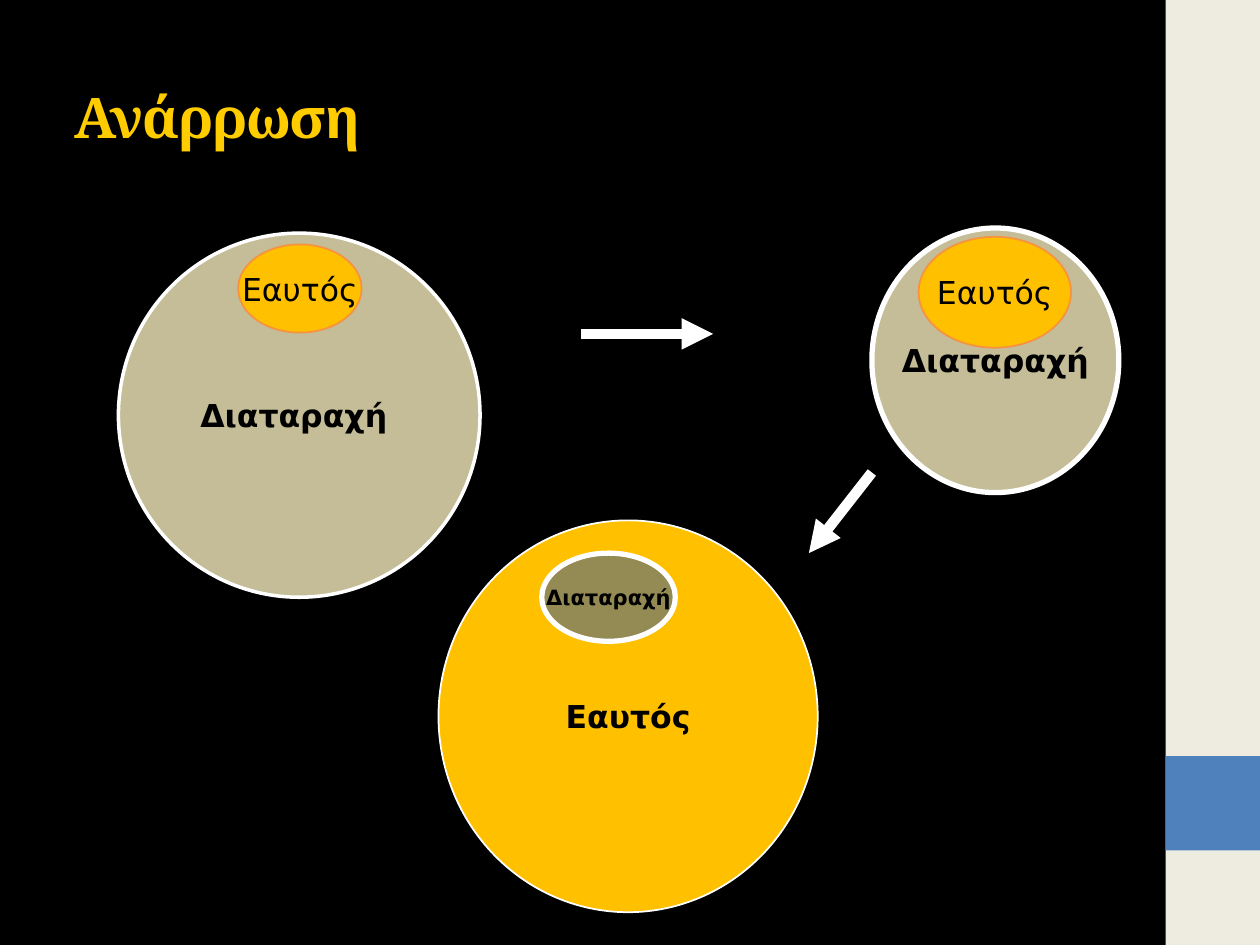
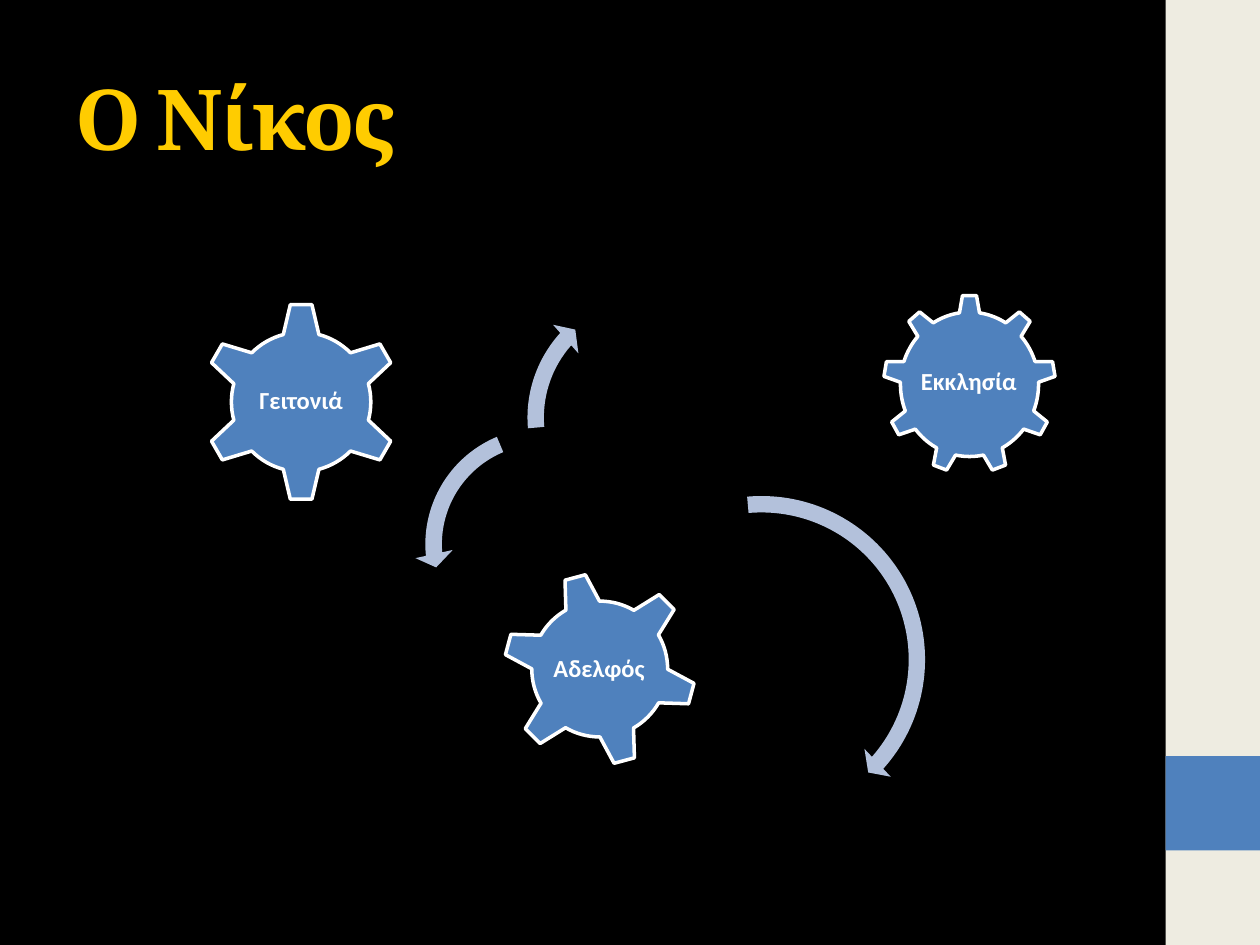
from lxml import etree
from pptx import Presentation
from pptx import util as u
from pptx.dml.color import RGBColor
from pptx.enum import shapes, text
from pptx.oxml.ns import qn

COLORS = {
    "background": "000000", "band": "EEECE1", "accent": "4F81BD",
    "title": "FFCC00", "white": "FFFFFF", "black": "000000",
    "disorder": "C4BD97", "small disorder": "948A54",
    "self": "FFC000", "self edge": "F69240", "turn": "B3C1DB",
}
WIDTH, HEIGHT = u.Inches(10), u.Inches(7.5)
COLUMNS, ROWS = 10, 7.5  # square grid cells across and down the slide
BAND = 0.75  # width of the side band, in cells
Kind = shapes.MSO_SHAPE


def across(columns):
    return round(WIDTH * columns / COLUMNS)


def down(rows):
    return round(HEIGHT * rows / ROWS)


def place(left, top, width, height):
    return across(left), down(top), across(width), down(height)


def color(name):
    return RGBColor.from_string(COLORS[name])


def write(shape, words, size, font, ink="black", bold=True, wrap=True,
          align=text.PP_ALIGN.CENTER, spacing=None, tracking=None, inset=None):
    """Put one formatted line of text, vertically centred, in a shape."""
    frame = shape.text_frame
    frame.word_wrap = wrap
    frame.vertical_anchor = text.MSO_ANCHOR.MIDDLE
    if inset is not None:
        frame.margin_left = frame.margin_right = across(inset)
        frame.margin_top = frame.margin_bottom = down(inset)
    paragraph = frame.paragraphs[0]
    paragraph.alignment = align
    paragraph.line_spacing = spacing
    run = paragraph.add_run()
    run.text = words
    run.font.size, run.font.name, run.font.bold = u.Pt(size), font, bold
    run.font.color.rgb = color(ink)
    if tracking:
        run.font._element.set("spc", str(tracking * 100))


def add_figure(slide, kind, box, fill, edge=None, weight=1, turn=0, adjust=()):
    shape = slide.shapes.add_shape(kind, *place(*box))
    shape.shadow.inherit = False
    shape.rotation = turn
    shape.fill.solid()
    shape.fill.fore_color.rgb = color(fill)
    if edge:
        shape.line.color.rgb = color(edge)
        shape.line.width = u.Pt(weight)
    else:
        shape.line.fill.background()
    for index, value in enumerate(adjust):
        shape.adjustments[index] = value
    return shape


def add_circle(slide, words, box, fill, edge="white", weight=1, size=18, bold=True):
    shape = add_figure(slide, Kind.OVAL, box, fill, edge, weight)
    write(shape, words, size, "DejaVu Sans", bold=bold, wrap=False)


def add_gear(slide, words, kind, box, label_box, turn=0):
    """Draw a gear with a label that stays level when the gear is turned."""
    add_figure(slide, kind, box, "accent", "white", 2, turn)
    label = slide.shapes.add_textbox(*place(*label_box))
    write(label, words, 14, "Calibri", "white", spacing=0.9, inset=0.02)


def add_arrow(slide, start, end):
    connector = slide.shapes.add_connector(
        shapes.MSO_CONNECTOR.STRAIGHT,
        across(start[0]), down(start[1]), across(end[0]), down(end[1]))
    connector.line.color.rgb = color("white")
    connector.line.width = u.Pt(6)
    line = connector.line._get_or_add_ln()
    etree.SubElement(line, qn("a:tailEnd"), type="triangle")
    etree.SubElement(connector._element.spPr, qn("a:effectLst"))


def add_slide(presentation, title, title_box, title_size):
    """Start a slide with the black ground, side band and title."""
    slide = presentation.slides.add_slide(presentation.slide_layouts[6])
    slide.background.fill.solid()
    slide.background.fill.fore_color.rgb = color("background")
    add_figure(slide, Kind.RECTANGLE, (COLUMNS - BAND, 0, BAND, ROWS), "band")
    add_figure(slide, Kind.RECTANGLE,
               (COLUMNS - BAND, ROWS - 2 * BAND, BAND, BAND), "accent")
    heading = slide.shapes.add_textbox(*place(*title_box))
    write(heading, title, title_size, "Cambria", "title",
          align=text.PP_ALIGN.LEFT, tracking=-1)
    return slide


def build_recovery(presentation):
    slide = add_slide(presentation, "Ανάρρωση", (0.49, 0.43, 7.31, 0.98), 32)
    # The disorder shrinks while the self grows
    add_circle(slide, "Διαταραχή ", (0.94, 1.85, 2.87, 2.89), "disorder", weight=2)
    add_circle(slide, "Εαυτός", (1.89, 1.94, 0.98, 0.7), "self", "self edge", bold=False)
    add_circle(slide, "Διαταραχή", (6.92, 1.81, 1.96, 2.1), "disorder", weight=3)
    add_circle(slide, "Εαυτός", (7.29, 1.88, 1.21, 0.88), "self", "self edge", bold=False)
    add_circle(slide, "Εαυτός", (3.48, 4.13, 3.01, 3.11), "self")
    add_circle(slide, "Διαταραχή", (4.3, 4.39, 1.06, 0.7), "small disorder",
               weight=3, size=12)
    # Steps between the stages
    add_arrow(slide, (4.61, 2.65), (5.66, 2.65))
    add_arrow(slide, (6.92, 3.75), (6.42, 4.39))


def build_nikos(presentation):
    slide = add_slide(presentation, "Ο Νίκος", (0.5, 0.3, 8.33, 1.25), 48)
    # People and places around him
    add_gear(slide, "Εκκλησία", Kind.GEAR_9,
             (7.01, 2.34, 1.37, 1.42), (7.28, 2.67, 0.82, 0.74))
    add_gear(slide, "Γειτονιά", Kind.GEAR_6,
             (1.6, 2.4, 1.58, 1.58), (2, 2.8, 0.78, 0.78))
    add_gear(slide, "Αδελφός", Kind.GEAR_6,
             (3.99, 4.54, 1.54, 1.54), (4.32, 4.88, 0.87, 0.87), turn=345)
    # Turning arrows: kind, left, top, side, adjustments
    turns = [
        (Kind.CIRCULAR_ARROW, 4.66, 3.85, 2.77, (0.047, 2.99, 25, 158.96, 0.055)),
        (Kind.LEFT_CIRCULAR_ARROW, 3.29, 3.31, 2.02, (0.065, 4.3, 104.89, 148.38, 0.075)),
        (Kind.CIRCULAR_ARROW, 4.1, 2.23, 2.17, (0.06, 3.94, 133.14, 105.08, 0.07)),
    ]
    for kind, left, top, side, adjust in turns:
        add_figure(slide, kind, (left, top, side, side), "turn", adjust=adjust)


def main():
    presentation = Presentation()
    presentation.slide_width, presentation.slide_height = WIDTH, HEIGHT
    build_recovery(presentation)
    build_nikos(presentation)
    presentation.save("out.pptx")


if __name__ == "__main__":
    main()
